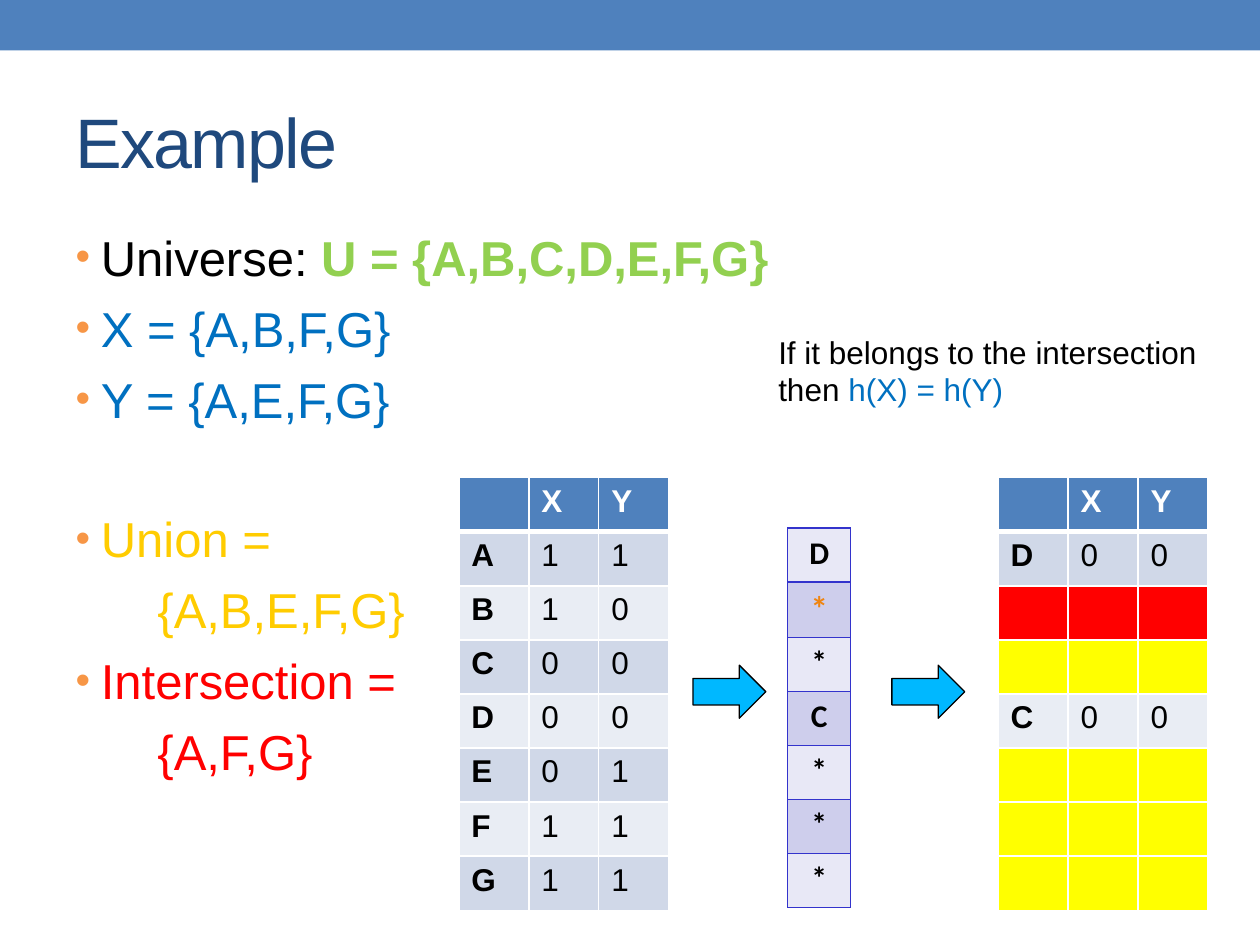
import pptx
import pptx.util
import pptx.dml.color
import pptx.enum.shapes
import pptx.enum.text
import pptx.oxml
import pptx.oxml.ns
from pptx.util import Cm, Pt

BLUE, WHITE, BLACK = "4F81BD", "FFFFFF", "000000"
BAND_DARK, BAND_LIGHT = "D0D8E8", "E9EDF4"
RED, YELLOW = "FF0000", "FFFF00"
SET_BLUE, UNION_GOLD = "0070C0", "FFCC00"
ROW_HEIGHT = Cm(1.09)
LEFT = pptx.enum.text.PP_ALIGN.LEFT
CENTER = pptx.enum.text.PP_ALIGN.CENTER


def color(hex_string):
    return pptx.dml.color.RGBColor.from_string(hex_string)


def add_xml(parent, markup):
    namespace = pptx.oxml.ns.nsdecls("a")
    head, tail = markup.split(" ", 1)
    parent.append(pptx.oxml.parse_xml(f"{head} {namespace} {tail}"))


def place(shape, left, top, width, height):
    shape.left, shape.top = Cm(left), Cm(top)
    shape.width, shape.height = Cm(width), Cm(height)


def write(para, spans, size, face="Arial", bold=None):
    """Fill a paragraph with (text, colour) spans of one font."""
    para.font.size, para.font.name, para.font.bold = Pt(size), face, bold
    for text, hue in spans:
        span = para.add_run()
        span.text = text
        span.font.color.rgb = color(hue)


def add_shape(page, kind, left, top, width, height, fill, line=None):
    shape = page.shapes.add_shape(kind, Cm(left), Cm(top), Cm(width), Cm(height))
    shape.shadow.inherit = False
    shape.fill.solid()
    shape.fill.fore_color.rgb = color(fill)
    if line:
        shape.line.color.rgb = color(line)
        shape.line.width = Pt(0.75)
    else:
        shape.line.fill.background()


def fill_title(title):
    place(title, 1.27, 1.47, 22.86, 2.74)
    title.text_frame.auto_size = pptx.enum.text.MSO_AUTO_SIZE.NONE
    title.text_frame.vertical_anchor = pptx.enum.text.MSO_ANCHOR.MIDDLE
    para = title.text_frame.paragraphs[0]
    para.alignment = LEFT
    write(para, [("Example", "1F497D")], 40)
    para.runs[0].font._element.set("spc", "-100")


def set_bullet(para, bulleted):
    """Hanging orange bullet, or a plain line indented below one."""
    properties = para._p.get_or_add_pPr()
    margin, indent = (Cm(0.51), -Cm(0.51)) if bulleted else (Cm(1.65), 0)
    properties.set("marL", str(margin))
    properties.set("indent", str(indent))
    if bulleted:
        add_xml(properties, '<a:buClr ><a:srgbClr val="F79646"/></a:buClr>')
        add_xml(properties, '<a:buSzPct val="85000"/>')
        add_xml(properties, '<a:buFont typeface="Arial"/>')
        add_xml(properties, '<a:buChar char="•"/>')
    else:
        add_xml(properties, "<a:buNone />")


def fill_body(body):
    place(body, 1.27, 4.45, 22.86, 13.54)
    frame = body.text_frame
    frame.auto_size = pptx.enum.text.MSO_AUTO_SIZE.NONE
    # spans, bulleted, space before in points
    lines = [
        ([("Universe: ", BLACK), ("U = {A,B,C,D,E,F,G}", "92D050")], True, 3),
        ([("X = {A,B,F,G}", SET_BLUE)], True, 7),
        ([("Y = {A,E,F,G}", SET_BLUE)], True, 7),
        ([("Union =", UNION_GOLD)], True, 46),
        ([("{A,B,E,F,G}", UNION_GOLD)], False, 7),
        ([("Intersection =", RED)], True, 7),
        ([("{A,F,G}", RED)], False, 7),
    ]
    for index, (spans, bulleted, gap) in enumerate(lines):
        para = frame.add_paragraph() if index else frame.paragraphs[0]
        set_bullet(para, bulleted)
        para.space_before = Pt(gap)
        write(para, spans, 28)
    frame.paragraphs[0].runs[1].font.bold = True


def set_cell(cell, text, fill, ink, border, top=1, bottom=1,
             size=18, face="Arial", bold=False, align=LEFT):
    properties = cell._tc.get_or_add_tcPr()
    for side, width in (("L", 1), ("R", 1), ("T", top), ("B", bottom)):
        add_xml(properties, f'<a:ln{side} w="{Pt(width)}"><a:solidFill>'
                f'<a:srgbClr val="{border}"/></a:solidFill></a:ln{side}>')
    cell.fill.solid()
    cell.fill.fore_color.rgb = color(fill)
    para = cell.text_frame.paragraphs[0]
    para.alignment = align
    write(para, [(text, ink)] if text else [], size, face, bold)


def add_grid(page, left, top, rows, columns, column_width):
    frame = page.shapes.add_table(rows, columns, Cm(left), Cm(top),
                                  Cm(column_width) * columns, ROW_HEIGHT * rows)
    for column in frame.table.columns:
        column.width = Cm(column_width)
    for row in frame.table.rows:
        row.height = ROW_HEIGHT
    return frame.table


def add_membership_table(page, left, rows):
    """Table of X and Y bits; a row is (three letters or blanks, fill)."""
    rows = [(" XY", BLUE)] + rows
    table = add_grid(page, left, 9.63, len(rows), 3, 1.41)
    for r, (values, fill) in enumerate(rows):
        for c, value in enumerate(values):
            set_cell(table.cell(r, c), value.strip(), fill,
                     WHITE if r == 0 else BLACK, WHITE,
                     top=3 if r == 1 else 1, bottom=3 if r == 0 else 1,
                     bold=r == 0 or c == 0)


def add_permutation(page, letters):
    table = add_grid(page, 15.88, 10.64, len(letters), 1, 1.27)
    for r, letter in enumerate(letters):
        ink, size = ("EF8511", 20) if r == 1 else (BLACK, 18)
        set_cell(table.cell(r, 0), letter, ("E8E8F6", "CECEEC")[r % 2], ink,
                 "3333CC", size=size, face="Calibri", bold=True, align=CENTER)


def add_note(page):
    box = page.shapes.add_textbox(Cm(15.44), Cm(6.58), Cm(9.96), Cm(1.8))
    box.text_frame.word_wrap = True
    write(box.text_frame.paragraphs[0],
          [("If it belongs to the intersection then ", BLACK),
           ("h(X) = h(Y)", SET_BLUE)], 18)


def main():
    deck = pptx.Presentation()
    deck.slide_width, deck.slide_height = Cm(25.4), Cm(19.05)
    page = deck.slides.add_slide(deck.slide_layouts[1])
    shapes = pptx.enum.shapes.MSO_SHAPE

    # Top band, title and list
    add_shape(page, shapes.RECTANGLE, 0, 0, 25.4, 1.02, BLUE)
    fill_title(page.shapes.title)
    fill_body(page.placeholders[1])

    # Membership table, permutation and reordered table
    bits = ["A11", "B10", "C00", "D00", "E01", "F11", "G11"]
    add_membership_table(page, 9.25, [
        (values, (BAND_DARK, BAND_LIGHT)[index % 2])
        for index, values in enumerate(bits)])
    add_permutation(page, "D**C***")
    blank = " " * 3
    add_membership_table(page, 20.12, [
        ("D00", BAND_DARK), (blank, RED), (blank, YELLOW),
        ("C00", BAND_LIGHT)] + [(blank, YELLOW)] * 3)

    # Arrows between the tables
    for left in (13.97, 17.98):
        add_shape(page, shapes.RIGHT_ARROW, left, 13.41, 1.47, 1.07,
                  "00B8FF", BLACK)

    add_note(page)
    deck.save("out.pptx")


if __name__ == "__main__":
    main()
